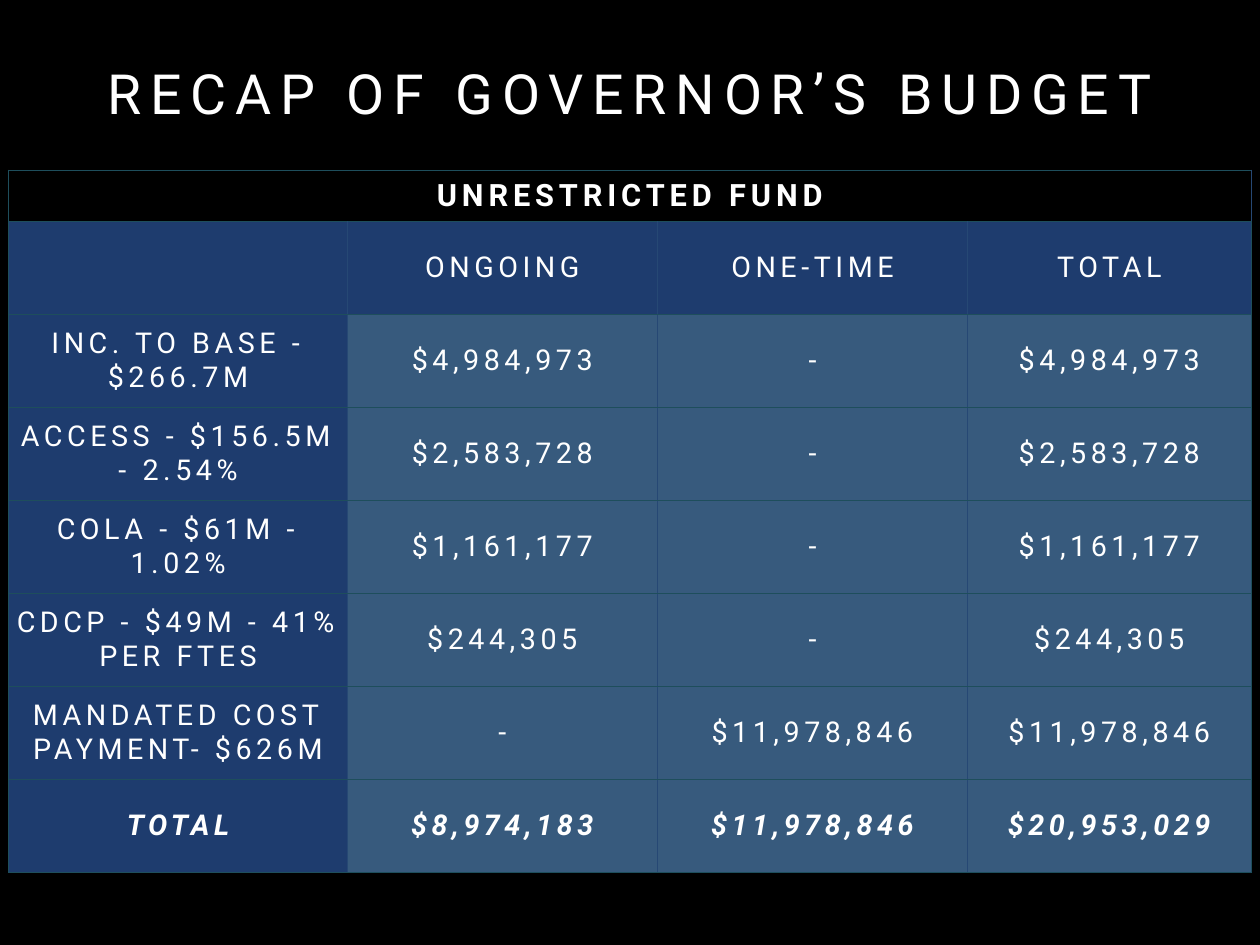
from lxml import etree
from pptx import Presentation
from pptx.dml.color import RGBColor
from pptx.enum import text
from pptx.oxml import ns
from pptx.util import Inches, Pt

WHITE = RGBColor(0xFF, 0xFF, 0xFF)
BLACK = RGBColor(0x00, 0x00, 0x00)
NAVY = RGBColor(0x1E, 0x3C, 0x6E)
STEEL = RGBColor(0x37, 0x5A, 0x7D)
TEAL = RGBColor(0x1E, 0x4E, 0x5C)
CYAN = RGBColor(0x53, 0xD5, 0xFD)
DIVIDER = RGBColor(0x26, 0x48, 0x74)

TITLE = "RECAP OF GOVERNOR’S BUDGET"
FUND = "UNRESTRICTED FUND"
BUDGET = [
    ("", "ONGOING", "ONE-TIME", "TOTAL"),
    ("INC. TO BASE - $266.7M", "$4,984,973", "-", "$4,984,973"),
    ("ACCESS - $156.5M - 2.54%", "$2,583,728", "-", "$2,583,728"),
    ("COLA - $61M - 1.02%", "$1,161,177", "-", "$1,161,177"),
    ("CDCP - $49M - 41% PER FTES", "$244,305", "-", "$244,305"),
    ("MANDATED COST PAYMENT- $626M", "-", "$11,978,846", "$11,978,846"),
    ("TOTAL", "$8,974,183", "$11,978,846", "$20,953,029"),
]
COLUMN_WIDTHS = (3.82, 3.5, 3.5, 3.2)
ROW_HEIGHTS = [0.58] + [1.05] * len(BUDGET)

TITLE_FORMAT = {"size": Pt(45), "bold": False}
FUND_FORMAT = {"size": Pt(25), "bold": True}
ENTRY_FORMAT = {"size": Pt(23.3), "bold": False}
SUM_FORMAT = {"size": Pt(23.3), "bold": True, "italic": True}


def write(frame, wording, font_format, spacing):
    """Put one centred, letter-spaced line of text in a frame."""
    line = frame.paragraphs[0]
    line.alignment = text.PP_ALIGN.CENTER
    run = line.add_run()
    run.text = wording
    for key, value in {"name": "Roboto", **font_format}.items():
        setattr(run.font, key, value)
    run.font.color.rgb = WHITE
    run.font._element.set("spc", str(round(spacing * 100)))


def draw_borders(cell, colors):
    """Give a cell a one-point border on each side."""
    properties = cell._tc.get_or_add_tcPr()
    for side, color in colors.items():
        border = etree.SubElement(properties, ns.qn(f"a:ln{side}"), w=str(Pt(1)))
        fill = etree.SubElement(border, ns.qn("a:solidFill"))
        etree.SubElement(fill, ns.qn("a:srgbClr"), val=str(color))


def add_title(slide):
    """Place the slide title."""
    title = slide.shapes.title
    place = {"left": 0.72, "top": 0.67, "width": 12.78, "height": 1.56}
    for key, value in place.items():
        setattr(title, key, Inches(value))
    frame_format = {"margin_left": 0, "margin_right": 0, "margin_top": 0,
                    "margin_bottom": 0, "word_wrap": True,
                    "vertical_anchor": text.MSO_ANCHOR.TOP,
                    "auto_size": text.MSO_AUTO_SIZE.NONE}
    for key, value in frame_format.items():
        setattr(title.text_frame, key, value)
    write(title.text_frame, TITLE, TITLE_FORMAT, 7.2)


def add_budget(slide):
    """Build the budget table under its fund heading."""
    budget = slide.shapes.add_table(
        len(ROW_HEIGHTS), len(COLUMN_WIDTHS), Inches(0.1), Inches(1.92),
        Inches(sum(COLUMN_WIDTHS)), Inches(sum(ROW_HEIGHTS))).table
    budget.horz_banding = False
    budget.first_row = False
    for column, width in zip(budget.columns, COLUMN_WIDTHS):
        column.width = Inches(width)
    for row, height in zip(budget.rows, ROW_HEIGHTS):
        row.height = Inches(height)
    budget.cell(0, 0).merge(budget.cell(0, len(COLUMN_WIDTHS) - 1))

    last_row, last_column = len(BUDGET), len(COLUMN_WIDTHS) - 1
    cell_format = {"vertical_anchor": text.MSO_ANCHOR.MIDDLE}
    for side in ("left", "right", "top", "bottom"):
        cell_format[f"margin_{side}"] = Inches(0.06)
    for r, entries in enumerate([(FUND, "", "", "")] + BUDGET):
        for c, entry in enumerate(entries):
            cell = budget.cell(r, c)
            for key, value in cell_format.items():
                setattr(cell, key, value)
            edge = CYAN if r == 0 else TEAL
            draw_borders(cell, {
                "L": TEAL if c == 0 else DIVIDER,
                "R": edge if c == last_column else DIVIDER,
                "T": TEAL, "B": TEAL})
            cell.fill.solid()
            cell.fill.fore_color.rgb = (
                BLACK if r == 0 else NAVY if r == 1 or c == 0 else STEEL)
            if entry:
                font_format = {0: FUND_FORMAT, last_row: SUM_FORMAT}.get(r, ENTRY_FORMAT)
                write(cell.text_frame, entry, font_format, 4 if r == 0 else 3.7)


def main():
    """Build and save the budget slide."""
    deck = Presentation()
    deck.slide_width, deck.slide_height = Inches(14.22), Inches(10.67)
    slide = deck.slides.add_slide(deck.slide_layouts[5])
    slide.background.fill.solid()
    slide.background.fill.fore_color.rgb = BLACK
    add_title(slide)
    add_budget(slide)
    deck.save("out.pptx")


if __name__ == "__main__":
    main()
